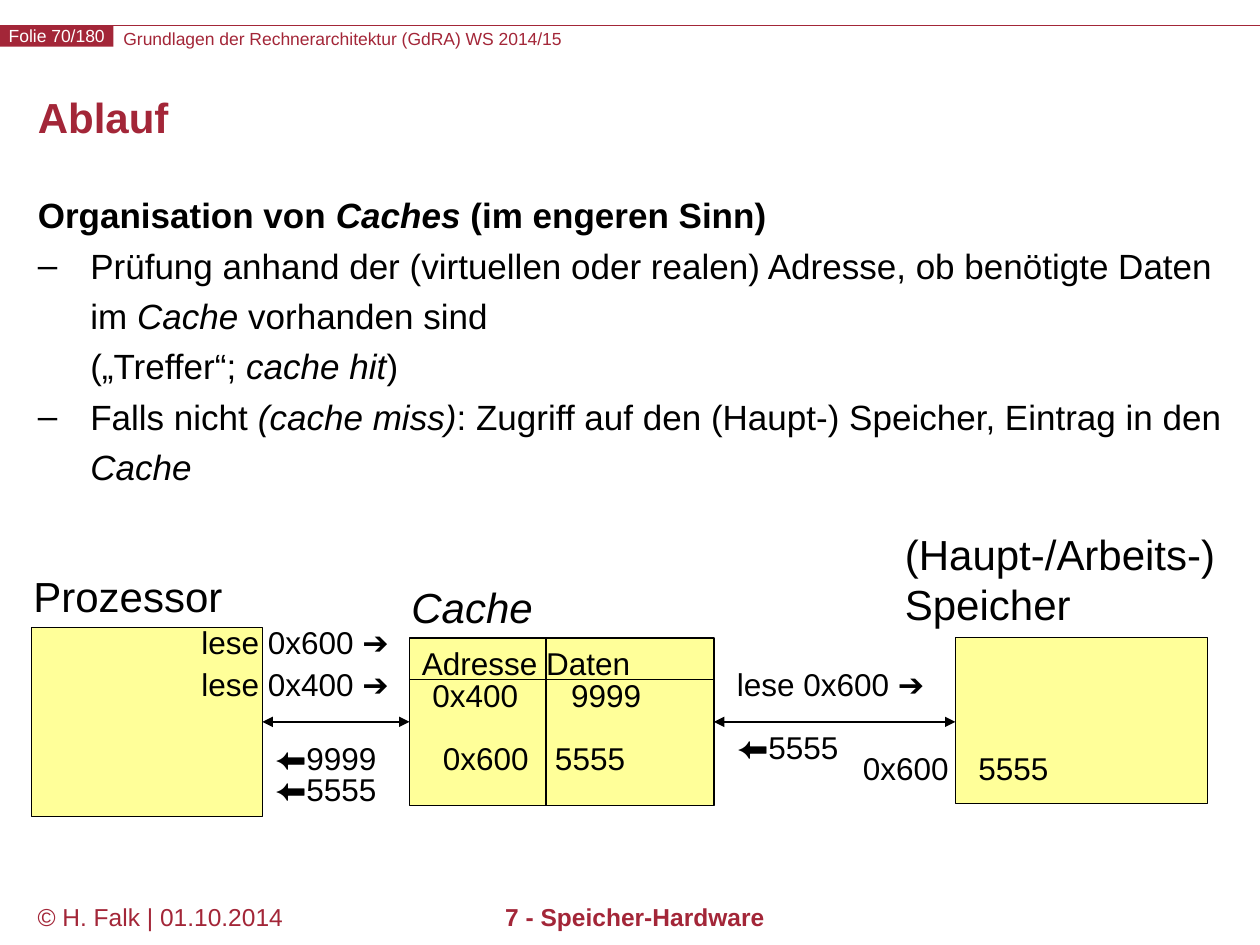
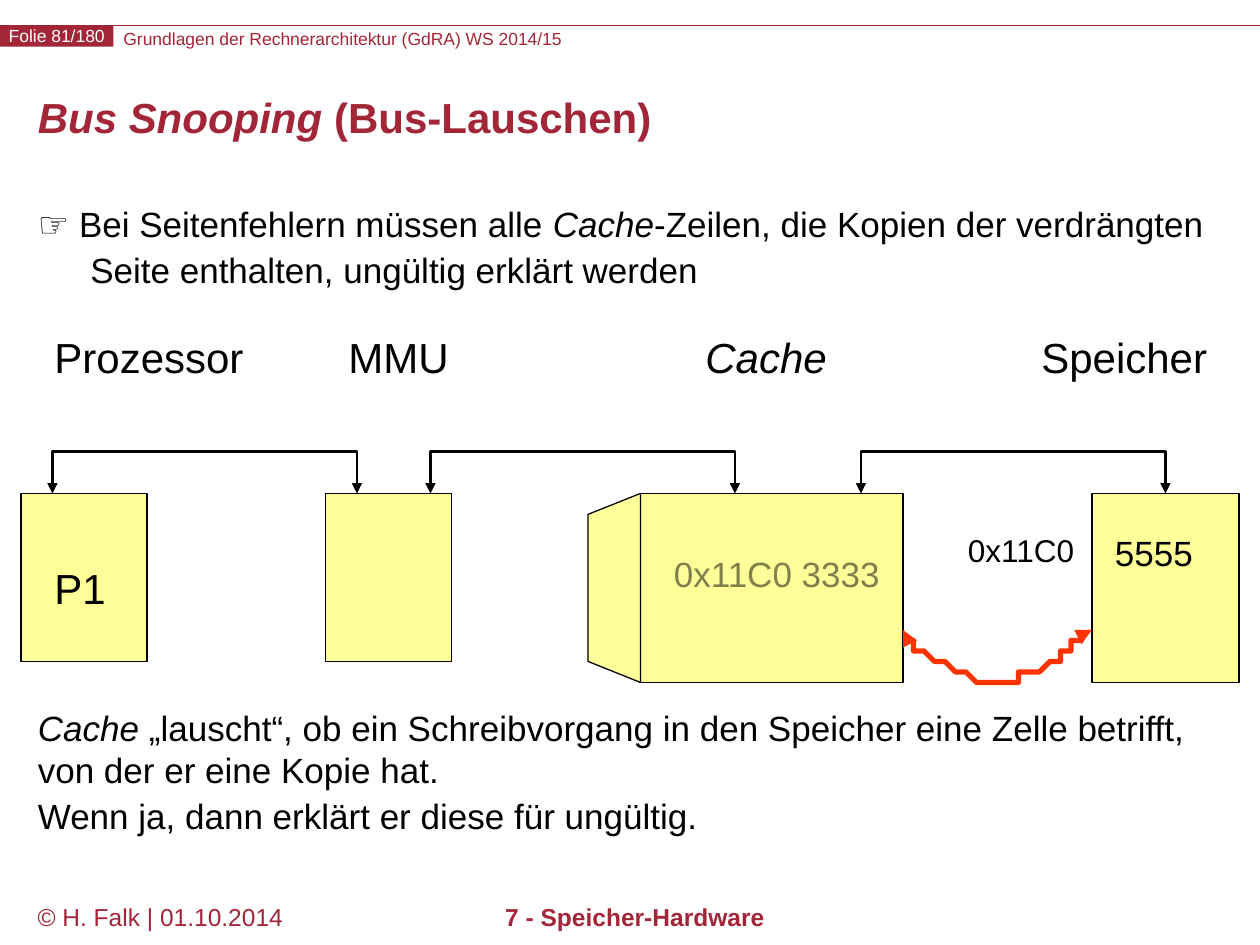
from pptx import Presentation
from pptx.dml.color import RGBColor
from pptx.enum.shapes import MSO_CONNECTOR, MSO_SHAPE
from pptx.enum.text import MSO_ANCHOR, MSO_AUTO_SIZE, PP_ALIGN
from pptx.oxml.ns import qn
from pptx.util import Inches, Pt
from lxml import etree

RECTANGLE = MSO_SHAPE.RECTANGLE
STRAIGHT = MSO_CONNECTOR.STRAIGHT
LEFT, CENTER = PP_ALIGN.LEFT, PP_ALIGN.CENTER
TOP, MIDDLE = MSO_ANCHOR.TOP, MSO_ANCHOR.MIDDLE
NO_AUTOFIT = MSO_AUTO_SIZE.NONE

FONT = "Arial"
COLORS = {name: RGBColor.from_string(code) for name, code in {
    "crimson": "A32638", "white": "FFFFFF", "black": "000000",
    "yellow": "FFFF99", "red": "FF3300"}.items()}

presentation = Presentation()
presentation.slide_width, presentation.slide_height = Inches(10), Inches(7.5)
CELL = presentation.slide_width // 120  # grid of 120 columns by 90 rows
HANGING = 5 * CELL


def add_runs(paragraph, text, size, color="black", bold=False):
    """Write text into the paragraph; parts between asterisks are italic."""
    for index, part in enumerate(text.split("*")):
        for line_number, line in enumerate(part.split("\n")):
            if line_number:
                paragraph.add_line_break()
            if not line:
                continue
            run = paragraph.add_run()
            run.text = line
            run.font.name, run.font.size = FONT, Pt(size)
            run.font.bold, run.font.italic = bold, index % 2 == 1
            run.font.color.rgb = COLORS[color]


def add_line(slide, start, end, color="black", width=0.75):
    line = slide.shapes.add_connector(
        STRAIGHT, *(round(value * CELL) for value in start + end))
    line.line.color.rgb = COLORS[color]
    line.line.width = Pt(width)
    etree.SubElement(line.element.spPr, qn("a:effectLst"))
    return line


# Titles and body lists: text, line spacing, bullet, left indent, space before
contents = [
    (70, "Ablauf", [
        ("Organisation von *Caches* (im engeren Sinn)", 0.9, None, HANGING, 0, True),
        ("Prüfung anhand der (virtuellen oder realen) Adresse, ob benötigte Daten "
         "im *Cache* vorhanden sind\n(„Treffer“; *cache hit*)",
         1.2, "–", HANGING, 0, False),
        ("Falls nicht *(cache miss)*: Zugriff auf den (Haupt-) Speicher, "
         "Eintrag in den *Cache*", 1.2, "–", HANGING, 0, False)]),
    (81, "*Bus Snooping* (Bus-Lauschen)", [
        ("☞ Bei Seitenfehlern müssen alle *Cache*-Zeilen, die Kopien der "
         "verdrängten Seite enthalten, ungültig erklärt werden",
         1.1, None, HANGING, 0, False),
        ("*Cache* „lauscht“, ob ein Schreibvorgang in den Speicher eine Zelle "
         "betrifft, von der er eine Kopie hat.", 1.0, None, 0, 238, False),
        ("Wenn ja, dann erklärt er diese für ungültig.",
         1.1, None, HANGING, 0, False)]),
]
for number, title_text, items in contents:
    slide = presentation.slides.add_slide(presentation.slide_layouts[1])
    title, body = slide.placeholders
    for placeholder, top, height, anchor in (
            (title, 0.6, 0.72, MIDDLE), (body, 1.52, 5.46, TOP)):
        placeholder.left, placeholder.width = Inches(0.2), Inches(9.61)
        placeholder.top, placeholder.height = Inches(top), Inches(height)
        placeholder.text_frame.auto_size = NO_AUTOFIT
        placeholder.text_frame.vertical_anchor = anchor

    paragraph = title.text_frame.paragraphs[0]
    paragraph.alignment, paragraph.line_spacing = LEFT, Pt(24)
    add_runs(paragraph, title_text, 24, "crimson", True)

    for index, (text, spacing, bullet, indent, before, bold) in enumerate(items):
        frame = body.text_frame
        paragraph = frame.add_paragraph() if index else frame.paragraphs[0]
        paragraph.line_spacing, paragraph.space_before = spacing, Pt(before)
        properties = paragraph._p.get_or_add_pPr()
        properties.set("marL", str(indent))
        properties.set("indent", str(-indent))
        if bullet:
            etree.SubElement(properties, qn("a:buChar")).set("char", bullet)
        else:
            etree.SubElement(properties, qn("a:buNone"))
        add_runs(paragraph, text, 20, bold=bold)

    add_line(slide, (0, 2.4), (120, 2.4), "crimson")
    band = slide.shapes.add_shape(
        RECTANGLE, 0, Inches(0.2), Inches(0.9), Inches(0.17))
    band.shadow.inherit = False
    band.fill.solid()
    band.fill.fore_color.rgb = COLORS["crimson"]
    band.line.fill.background()
    course = slide.shapes.add_textbox(
        Inches(0.98), Inches(0.22), Inches(6.6), Inches(0.17))
    for shape, text, color, alignment in (
            (band, f"Folie {number}/180", "white", CENTER),
            (course, "Grundlagen der Rechnerarchitektur (GdRA) WS 2014/15",
             "crimson", LEFT)):
        frame = shape.text_frame
        frame.margin_left = frame.margin_right = 0
        frame.margin_top = frame.margin_bottom = 0
        frame.word_wrap = shape is course
        frame.paragraphs[0].alignment = alignment
        add_runs(frame.paragraphs[0], text, 10, color)

    for left, width, text, alignment, bold in (
            (0.2, 2.2, "© H. Falk | 01.10.2014", LEFT, False),
            (2.01, 6.06, "7 - Speicher-Hardware", CENTER, True)):
        footer = slide.shapes.add_textbox(
            Inches(left), Inches(7.11), Inches(width), Inches(0.39))
        footer.text_frame.word_wrap = True
        footer.text_frame.paragraphs[0].alignment = alignment
        add_runs(footer.text_frame.paragraphs[0], text, 14, "crimson", bold)

sequence, snooping = presentation.slides

# Hardware units: left, top, width, height in grid cells
boxes = [
    (sequence, 3, 59.75, 22, 18), (sequence, 39, 60.75, 29, 16),
    (sequence, 91, 60.75, 24, 15.75),
    (snooping, 2, 47, 12, 16), (snooping, 31, 47, 12, 16),
    (snooping, 61, 47, 25, 18), (snooping, 104, 47, 14, 18),
]
for slide, *place in boxes:
    box = slide.shapes.add_shape(RECTANGLE, *(round(value * CELL) for value in place))
    box.shadow.inherit = False
    box.fill.solid()
    box.fill.fore_color.rgb = COLORS["yellow"]
    box.line.color.rgb = COLORS["black"]
    box.line.width = Pt(0.75)

add_line(sequence, (52, 60.75), (52, 76.75))
add_line(sequence, (39, 64.75), (68, 64.75))
double_arrows = [add_line(sequence, (start, 68.75), (end, 68.75), width=1.5)
                 for start, end in ((25, 39), (68, 91))]

# Snooping arrow: two Bézier segments sampled into short steps
snoop_points = [(86, 60)]
for a, b, c, d in (((86, 61), (86, 61), (90, 64), (95, 65)),
                   ((95, 65), (98, 64.8), (101, 62.4), (104, 60))):
    if a == (86, 61):
        b, c = (87.5, 61.8), (92, 65.2)
    for step in range(1, 17):
        t = step / 16
        weights = ((1 - t) ** 3, 3 * t * (1 - t) ** 2, 3 * t * t * (1 - t), t ** 3)
        snoop_points.append(tuple(
            sum(weight * point[axis] for weight, point in zip(weights, (a, b, c, d)))
            for axis in (0, 1)))

outlines = [([(61, 47), (56, 49.25), (56, 62.75), (61, 65)], True, "black", 0.75)]
outlines += [([(left, 47), (left, 43), (left + 29, 43), (left + 29, 47)],
              False, "black", 1.5) for left in (5, 41, 82)]
outlines.append((snoop_points, False, "red", 3))
for points, closed, color, width in outlines:
    builder = snooping.shapes.build_freeform(*points[0], scale=CELL)
    builder.add_line_segments(points[1:], close=closed)
    outline = builder.convert_to_shape()
    outline.shadow.inherit = False
    outline.line.color.rgb = COLORS[color]
    outline.line.width = Pt(width)
    if closed:
        outline.fill.solid()
        outline.fill.fore_color.rgb = COLORS["yellow"]
    else:
        outline.fill.background()
        double_arrows.append(outline)

for arrow in double_arrows:
    line_properties = arrow.element.spPr.find(qn("a:ln"))
    for end in ("a:headEnd", "a:tailEnd"):
        etree.SubElement(line_properties, qn(end)).set("type", "triangle")

# Labels: left, top, width in grid cells, size, text, tab stop in inches
labels = [
    (sequence, 2, 53.75, 23, 24, "Prozessor", None),
    (sequence, 38, 54.75, 17, 24, "*Cache*", None),
    (sequence, 85, 49.75, 35, 24, "(Haupt-/Arbeits-)\nSpeicher", None),
    (sequence, 18, 58.75, 28, 18, "lese 0x600 ➔", None),
    (sequence, 18, 62.75, 24, 18, "lese 0x400 ➔", None),
    (sequence, 25, 69.75, 16, 18, "⬅9999", None),
    (sequence, 25, 72.75, 13, 18, "⬅5555", None),
    (sequence, 39, 60.75, 28, 18, "Adresse Daten", None),
    (sequence, 40, 63.75, 26, 18, "0x400\t9999", 1.1),
    (sequence, 41, 69.75, 23, 18, "0x600\t5555", 0.89),
    (sequence, 69, 62.75, 23, 18, "lese 0x600 ➔", None),
    (sequence, 69, 68.75, 13, 18, "⬅5555", None),
    (sequence, 81, 70.75, 15, 18, "0x600", None),
    (sequence, 92, 70.75, 10, 18, "5555", None),
    (snooping, 4, 31, 20.5, 24, "Prozessor", None),
    (snooping, 32, 31, 16, 24, "MMU", None),
    (snooping, 66, 31, 23, 24, "*Cache*", None),
    (snooping, 98, 31, 19, 24, "Speicher", None),
    (snooping, 4, 53, 9, 24, "P1", None),
    (snooping, 63, 52, 23, 20, "0x11C0 3333", None),
    (snooping, 91, 50, 13, 18, "0x11C0", None),
    (snooping, 105, 50, 12, 20, "5555", None),
]
for slide, left, top, width, size, text, tab in labels:
    height = 1.2 + 0.2 * size * len(text.split("\n"))
    label = slide.shapes.add_textbox(
        *(round(value * CELL) for value in (left, top, width, height)))
    label.text_frame.word_wrap = True
    paragraph = label.text_frame.paragraphs[0]
    if tab:
        tabs = etree.SubElement(paragraph._p.get_or_add_pPr(), qn("a:tabLst"))
        stop = etree.SubElement(tabs, qn("a:tab"))
        stop.set("pos", str(Inches(tab)))
        stop.set("algn", "l")
    add_runs(paragraph, text, size)

# Half-transparent veil over the invalidated cache line
veil = snooping.shapes.add_shape(RECTANGLE, 62 * CELL, 53 * CELL, 23 * CELL, 4 * CELL)
veil.shadow.inherit = False
veil.line.fill.background()
veil.fill.solid()
veil.fill.fore_color.rgb = COLORS["yellow"]
veil_color = veil.element.spPr.find(qn("a:solidFill"))[0]
etree.SubElement(veil_color, qn("a:alpha")).set("val", "50000")

presentation.save("out.pptx")
